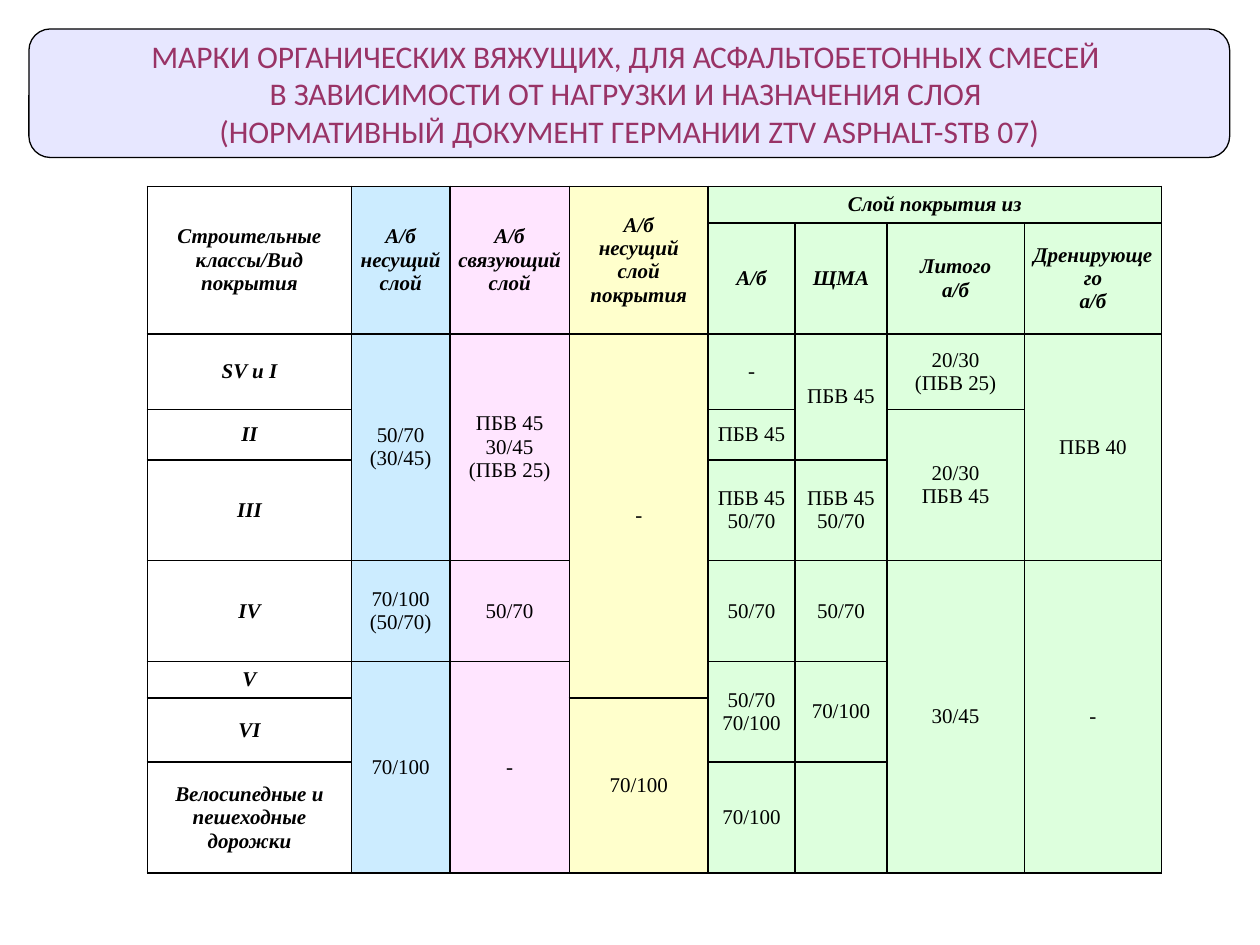
from lxml import etree
from pptx import Presentation
from pptx.dml.color import RGBColor
from pptx.enum.shapes import MSO_SHAPE
from pptx.enum.text import MSO_ANCHOR, PP_ALIGN
from pptx.oxml.ns import qn
from pptx.util import Inches, Pt

PANEL_SHAPE = MSO_SHAPE.FLOWCHART_ALTERNATE_PROCESS
CENTER = PP_ALIGN.CENTER
MIDDLE = MSO_ANCHOR.MIDDLE

COLORS = {
    "black": "000000", "title": "993366", "panel": "CCCCFF",
    "base": "CCECFF", "binder": "FFE5FF", "combined": "FFFFCC", "surface": "DDFFDD",
}

# Content
TITLE = (
    "МАРКИ ОРГАНИЧЕСКИХ ВЯЖУЩИХ, ДЛЯ АСФАЛЬТОБЕТОННЫХ СМЕСЕЙ \n"
    "В ЗАВИСИМОСТИ ОТ НАГРУЗКИ И НАЗНАЧЕНИЯ СЛОЯ \n"
    "(НОРМАТИВНЫЙ ДОКУМЕНТ ГЕРМАНИИ ZTV ASPHALT-STB 07)"
)
COLUMNS = [  # width, fill colour
    (1.62, None), (0.78, "base"), (0.95, "binder"), (1.10, "combined"),
    (0.69, "surface"), (0.73, "surface"), (1.09, "surface"), (1.09, "surface"),
]
ROW_HEIGHTS = [0.29, 0.88, 0.6, 0.4, 0.8, 0.8, 0.29, 0.51, 0.88]
HEADER_ROWS = 2
UP, LEFT = "^", "<"  # the cell belongs to the one above or to the left
ROWS = [
    ["Строительные\nклассы/Вид\nпокрытия", "А/б\nнесущий\nслой", "А/б\nсвязующий\nслой",
     "А/б\nнесущий слой\nпокрытия", "Слой покрытия из", LEFT, LEFT, LEFT],
    [UP, UP, UP, UP, "А/б", "ЩМА", "Литого\nа/б", "Дренирующего\nа/б"],
    ["SV и I", "50/70\n(30/45)", "ПБВ 45\n30/45\n(ПБВ 25)", "-", "-", "ПБВ 45",
     "20/30\n(ПБВ 25)", "ПБВ 40"],
    ["II", UP, UP, UP, "ПБВ 45", UP, "20/30\nПБВ 45", UP],
    ["III", UP, UP, UP, "ПБВ 45\n50/70", "ПБВ 45\n50/70", UP, UP],
    ["IV", "70/100\n(50/70)", "50/70", UP, "50/70", "50/70", "30/45", "-"],
    ["V", "70/100", "-", UP, "50/70\n70/100", "70/100", UP, UP],
    ["VI", UP, UP, "70/100", UP, UP, UP, UP],
    ["Велосипедные и\nпешеходные дорожки", UP, UP, UP, "70/100", "", UP, UP],
]

# Layout
PANEL_BOX = [Inches(value) for value in (0.23, 0.23, 9.53, 1.02)]
TABLE_LEFT, TABLE_TOP = 1.17, 1.48


def rgb(name):
    return RGBColor.from_string(COLORS[name])


def write_text(frame, text, *, font, size, color="black", bold=False, italic=False):
    frame.vertical_anchor = MIDDLE
    for index, line in enumerate(text.split("\n")):
        paragraph = frame.paragraphs[0] if index == 0 else frame.add_paragraph()
        paragraph.alignment = CENTER
        run = paragraph.add_run()
        run.text = line
        run.font.name, run.font.size = font, Pt(size)
        run.font.bold, run.font.italic = bold, italic
        run.font.color.rgb = rgb(color)


def add_borders(cell, width=1):
    properties = cell._tc.get_or_add_tcPr()
    for side in ("lnL", "lnR", "lnT", "lnB"):
        line = etree.SubElement(properties, qn(f"a:{side}"), w=str(Pt(width)))
        fill = etree.SubElement(line, qn("a:solidFill"))
        etree.SubElement(fill, qn("a:srgbClr"), val=COLORS["black"])


def add_title(slide):
    panel = slide.shapes.add_shape(PANEL_SHAPE, *PANEL_BOX)
    panel.shadow.inherit = False
    panel.fill.solid()
    panel.fill.fore_color.rgb = rgb("panel")
    color = panel.fill._xPr.find(qn("a:solidFill"))[0]
    etree.SubElement(color, qn("a:alpha"), val="46000")
    panel.line.color.rgb = rgb("black")
    panel.line.width = Pt(0.75)

    # The title lies on top of its panel
    title = slide.shapes.title
    title.left, title.top, title.width, title.height = PANEL_BOX
    panel._element.addnext(title._element)
    title.text_frame.word_wrap = False
    write_text(title.text_frame, TITLE, font="Calibri", size=18, color="title")


def span_length(markers, marker):
    """Count the cell itself and the merge markers that follow it."""
    length = 1
    for value in markers:
        if value != marker:
            break
        length += 1
    return length


def add_binder_table(slide):
    width = sum(column[0] for column in COLUMNS)
    frame = slide.shapes.add_table(
        len(ROWS), len(COLUMNS), Inches(TABLE_LEFT), Inches(TABLE_TOP),
        Inches(width), Inches(sum(ROW_HEIGHTS)))
    table = frame.table
    table.first_row = table.horz_banding = False
    for column, (column_width, _) in zip(table.columns, COLUMNS):
        column.width = Inches(column_width)
    for row, height in zip(table.rows, ROW_HEIGHTS):
        row.height = Inches(height)

    for row, values in enumerate(ROWS):
        for column, text in enumerate(values):
            cell = table.cell(row, column)
            cell.margin_left = cell.margin_right = Inches(0.05)
            cell.margin_top = cell.margin_bottom = 0
            add_borders(cell)
            fill = COLUMNS[column][1]
            if fill:
                cell.fill.solid()
                cell.fill.fore_color.rgb = rgb(fill)
            else:
                cell.fill.background()
            if text in (UP, LEFT):
                continue
            below = [line[column] for line in ROWS[row + 1:]]
            last_row = row + span_length(below, UP) - 1
            last_column = column + span_length(values[column + 1:], LEFT) - 1
            if (last_row, last_column) != (row, column):
                cell.merge(table.cell(last_row, last_column))
            heading = row < HEADER_ROWS or column == 0
            cell.vertical_anchor = MIDDLE
            write_text(cell.text_frame, text, font="Times New Roman", size=12,
                       bold=heading, italic=heading)


def main():
    presentation = Presentation()
    presentation.slide_width, presentation.slide_height = Inches(10), Inches(7.5)
    slide = presentation.slides.add_slide(presentation.slide_layouts[5])
    add_title(slide)
    add_binder_table(slide)
    presentation.save("out.pptx")


if __name__ == "__main__":
    main()
